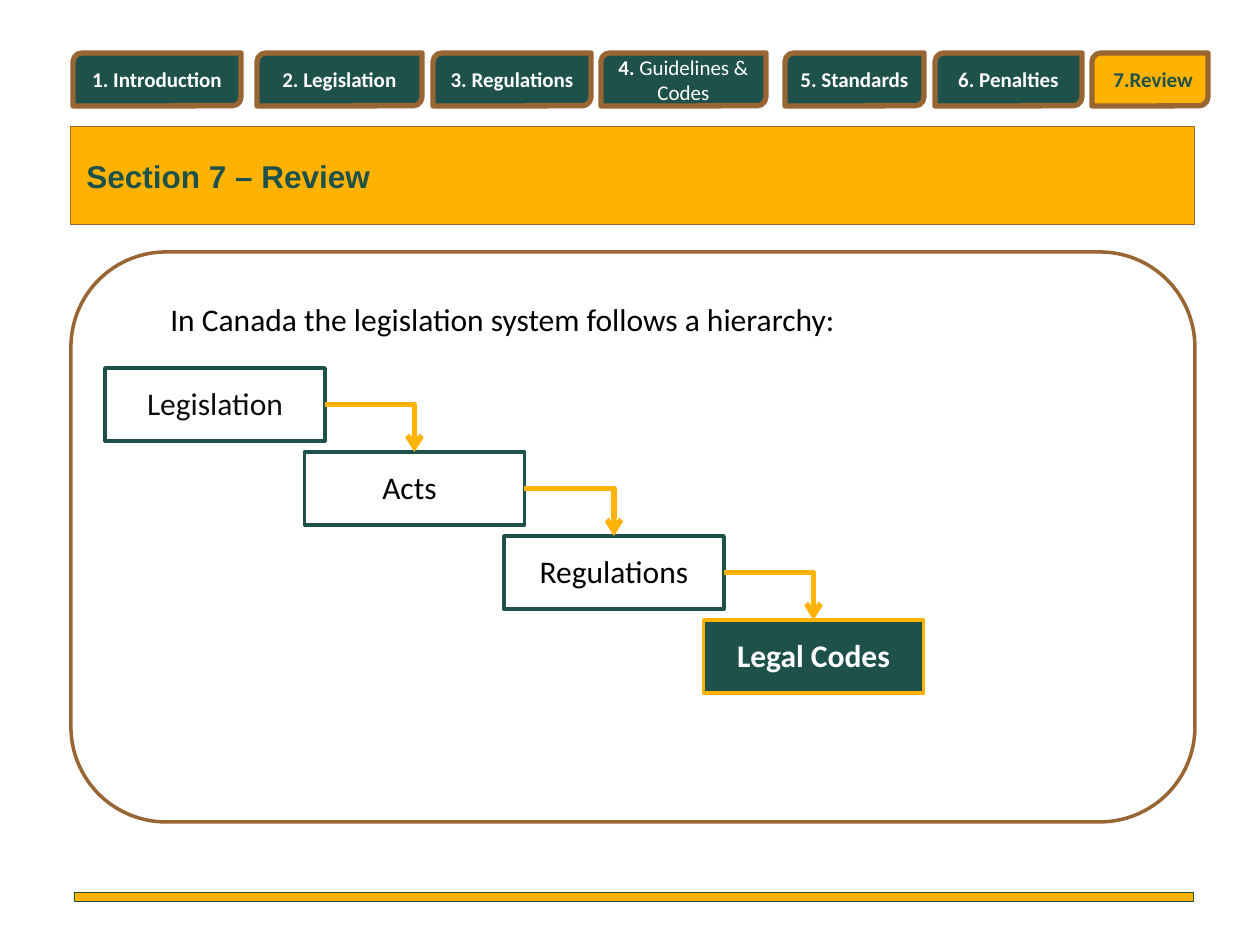
from lxml import etree
from pptx import Presentation
from pptx.dml.color import RGBColor
from pptx.enum.shapes import MSO_CONNECTOR, MSO_SHAPE
from pptx.enum.text import MSO_ANCHOR, MSO_AUTO_SIZE, PP_ALIGN
from pptx.oxml.ns import qn
from pptx.util import Emu, Pt

RECTANGLE, ROUNDED = MSO_SHAPE.RECTANGLE, MSO_SHAPE.ROUNDED_RECTANGLE
TAB = MSO_SHAPE.ROUND_2_DIAG_RECTANGLE
LEFT, CENTER, RIGHT = PP_ALIGN.LEFT, PP_ALIGN.CENTER, PP_ALIGN.RIGHT
GREEN = RGBColor(0x1F, 0x51, 0x4B)
AMBER = RGBColor(0xFF, 0xB3, 0x00)
BROWN = RGBColor(0x99, 0x65, 0x32)
WHITE = RGBColor(0xFF, 0xFF, 0xFF)
BLACK = RGBColor(0x00, 0x00, 0x00)
NEAR_BLACK = RGBColor(0x0D, 0x0D, 0x0D)

# Content: (bold text, regular text, left, width, fill, text colour, alignment)
TABS = [
    ("1. Introduction", "", 73, 168, GREEN, WHITE, CENTER),
    ("2. Legislation", "", 257, 165, GREEN, WHITE, CENTER),
    ("3. Regulations", "", 433, 158, GREEN, WHITE, CENTER),
    ("4. ", "Guidelines & Codes", 601, 165, GREEN, WHITE, CENTER),
    ("5. Standards", "", 785, 139, GREEN, WHITE, CENTER),
    ("6. Penalties", "", 935, 147, GREEN, WHITE, CENTER),
    ("7.Review", "", 1092, 116, AMBER, GREEN, RIGHT),
]
TITLE = "Section 7 – Review"
INTRO = "In Canada the legislation system follows a hierarchy:"
# (text, label width, fill, line, text colour, bold)
LEVELS = [
    ("Legislation", 220, None, GREEN, NEAR_BLACK, False),
    ("Acts", 210, None, GREEN, BLACK, False),
    ("Regulations", 220, None, GREEN, BLACK, False),
    ("Legal Codes", 220, AMBER and GREEN, AMBER, WHITE, True),
]
LEVELS[-1] = ("Legal Codes", 220, GREEN, AMBER, WHITE, True)
TAB_TOP, TAB_HEIGHT = 53, 53
BOX_LEFT, BOX_TOP, BOX_WIDTH, BOX_HEIGHT = 105, 368, 220, 73
STEP_ACROSS, STEP_DOWN = 199.5, 84
LABEL_OFFSET, LABEL_HEIGHT = 10, 50


def px(length):
    return Emu(round(length * 914400 / 126))


def add_box(slide, kind, left, top, width, height, fill, line, weight):
    shape = slide.shapes.add_shape(kind, px(left), px(top), px(width), px(height))
    shape.shadow.inherit = False
    if fill is None:
        shape.fill.background()
    else:
        shape.fill.solid()
        shape.fill.fore_color.rgb = fill
    shape.line.color.rgb = line
    shape.line.width = Pt(weight)
    return shape


def write(frame, *runs, size=18, font="Calibri", color=BLACK, align=LEFT,
          anchor=MSO_ANCHOR.TOP):
    """Fill a text frame with one paragraph of (text, bold) runs."""
    frame.word_wrap = True
    frame.vertical_anchor = anchor
    paragraph = frame.paragraphs[0]
    paragraph.alignment = align
    for text, bold in runs:
        run = paragraph.add_run()
        run.text = text
        run.font.size = Pt(size)
        run.font.name = font
        run.font.bold = bold
        run.font.color.rgb = color


def add_label(slide, text, left, top, width, bold=False, **text_format):
    label = slide.shapes.add_textbox(px(left), px(top), px(width), px(LABEL_HEIGHT))
    label.text_frame.auto_size = MSO_AUTO_SIZE.SHAPE_TO_FIT_TEXT
    write(label.text_frame, (text, bold), **text_format)


def add_arrow(slide, upper, lower):
    """Join the right side of one box to the top of the next."""
    arrow = slide.shapes.add_connector(MSO_CONNECTOR.ELBOW, 0, 0, 0, 0)
    arrow.begin_connect(upper, 3)
    arrow.end_connect(lower, 0)
    arrow.line.color.rgb = AMBER
    arrow.line.width = Pt(3)
    properties = arrow._element.spPr
    properties.find(qn("a:prstGeom")).set("prst", "bentConnector2")
    etree.SubElement(properties.find(qn("a:ln")), qn("a:tailEnd"), type="arrow")
    etree.SubElement(properties, qn("a:effectLst"))


def main():
    presentation = Presentation()
    presentation.slide_width, presentation.slide_height = px(1260), px(945)
    slide = presentation.slides.add_slide(presentation.slide_layouts[6])

    # Content frame and footer bar
    add_box(slide, ROUNDED, 71, 252, 1124, 570, None, BROWN, 2)
    add_box(slide, RECTANGLE, 74, 892, 1120, 10, AMBER, GREEN, 0.5)

    # Descending hierarchy
    boxes = []
    for index, (text, width, fill, line, color, bold) in enumerate(LEVELS):
        left = BOX_LEFT + index * STEP_ACROSS
        top = BOX_TOP + index * STEP_DOWN
        boxes.append(add_box(slide, RECTANGLE, left, top, BOX_WIDTH, BOX_HEIGHT,
                             fill, line, 2))
        add_label(slide, text, left, top + LABEL_OFFSET, width, bold,
                  color=color, align=CENTER)
    for upper, lower in zip(boxes, boxes[1:]):
        add_arrow(slide, upper, lower)
    add_label(slide, INTRO, 158, 294, 892)

    # Section banner
    add_box(slide, RECTANGLE, 71, 127, 1124, 98, AMBER, BROWN, 0.5)
    add_label(slide, TITLE, 74, 151, 954, True, font="Arial", color=GREEN)

    # Navigation tabs
    for strong, plain, left, width, fill, color, align in TABS:
        tab = add_box(slide, TAB, left, TAB_TOP, width, TAB_HEIGHT, fill, BROWN, 3)
        runs = [(strong, True)] + ([(plain, False)] if plain else [])
        write(tab.text_frame, *runs, size=12, color=color, align=align,
              anchor=MSO_ANCHOR.MIDDLE)

    presentation.save("out.pptx")


if __name__ == "__main__":
    main()
